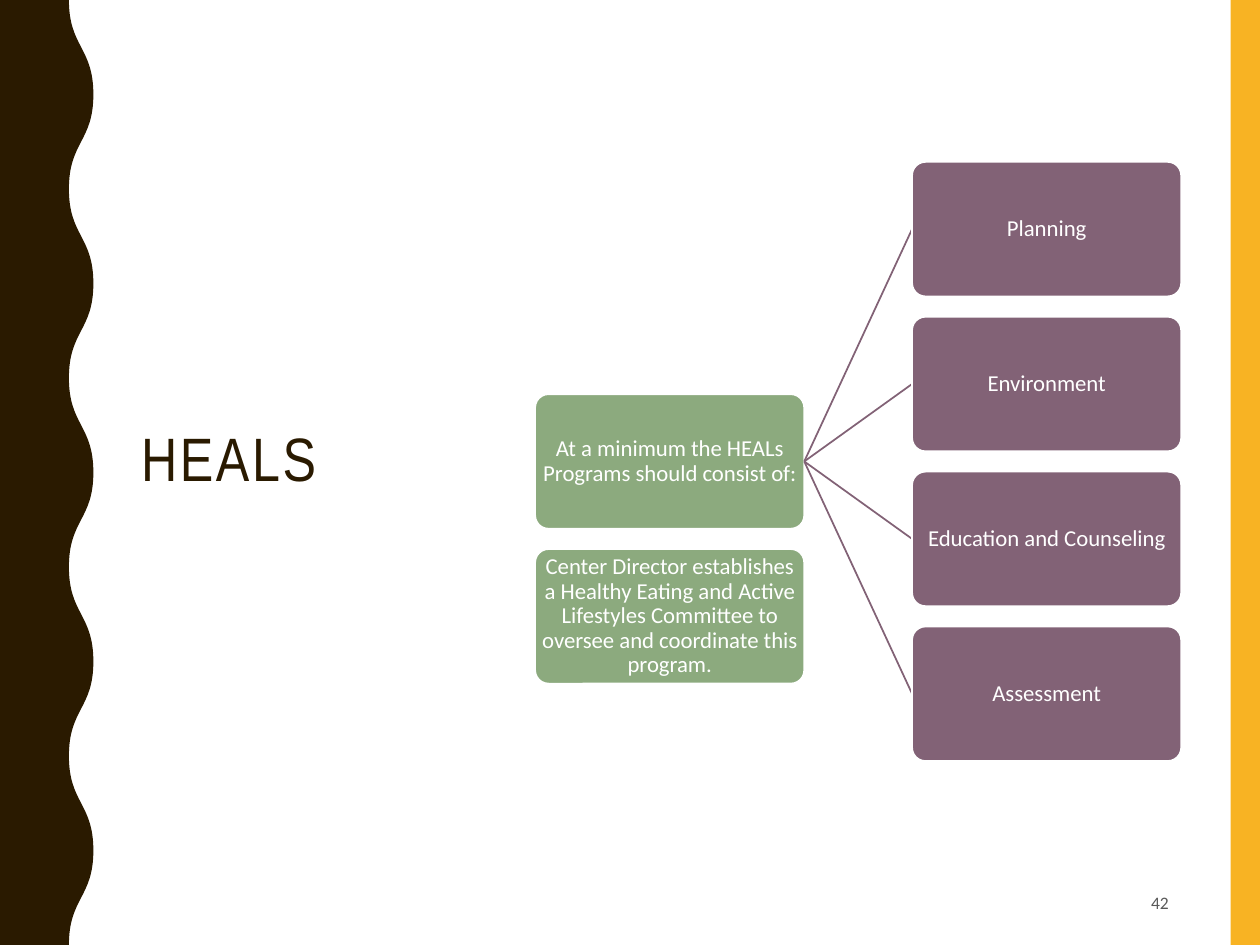
from lxml import etree
from pptx import Presentation
from pptx.dml.color import RGBColor
from pptx.enum.shapes import MSO_CONNECTOR, MSO_SHAPE
from pptx.enum.text import MSO_ANCHOR, MSO_AUTO_SIZE, PP_ALIGN
from pptx.oxml.ns import qn
from pptx.util import Pt

LEFT, CENTER, RIGHT = PP_ALIGN.LEFT, PP_ALIGN.CENTER, PP_ALIGN.RIGHT
MIDDLE = MSO_ANCHOR.MIDDLE
NO_AUTOFIT = MSO_AUTO_SIZE.NONE
RECTANGLE, ROUNDED = MSO_SHAPE.RECTANGLE, MSO_SHAPE.ROUNDED_RECTANGLE
STRAIGHT = MSO_CONNECTOR.STRAIGHT
TITLE_ONLY = 5
RIGHT_SIDE, LEFT_SIDE = 3, 1

COLORS = {
    "brown": "2A1A00",
    "yellow": "F8B323",
    "green": "8CAA7E",
    "purple": "826276",
    "gray": "595959",
    "white": "FFFFFF",
}


def write_text(shape, text, *, size, color, align=CENTER, font="Calibri",
               line_spacing=0.9, letter_spacing=None, inset=None):
    frame = shape.text_frame
    frame.word_wrap = True
    frame.auto_size = NO_AUTOFIT
    frame.vertical_anchor = MIDDLE
    if inset is not None:
        frame.margin_left = frame.margin_right = Pt(inset)
        frame.margin_top = frame.margin_bottom = Pt(inset)
    paragraph = frame.paragraphs[0]
    paragraph.alignment = align
    paragraph.line_spacing = line_spacing
    run = paragraph.add_run()
    run.text = text
    run.font.size = Pt(size)
    run.font.name = font
    run.font.color.rgb = RGBColor.from_string(COLORS[color])
    if letter_spacing is not None:
        run.font._element.set("spc", str(int(letter_spacing * 100)))


def paint(shape, fill, line=None):
    shape.shadow.inherit = False
    shape.fill.solid()
    shape.fill.fore_color.rgb = RGBColor.from_string(COLORS[fill])
    if line:
        shape.line.color.rgb = RGBColor.from_string(COLORS[line])
        shape.line.width = Pt(1)
    else:
        shape.line.fill.background()


presentation = Presentation()
presentation.slide_width, presentation.slide_height = Pt(720), Pt(540)
slide = presentation.slides.add_slide(presentation.slide_layouts[TITLE_ONLY])
shapes = slide.shapes

# Side bands: a plain stripe on the right, a wavy edge on the left
stripe = shapes.add_shape(RECTANGLE, Pt(703.2), Pt(0), Pt(16.8), Pt(540))
paint(stripe, "yellow")

TROUGH, CREST, HALF_WAVE, HALF_WAVES = 39.4, 53.4, 54, 10
turns = [(Pt(CREST if i % 2 else TROUGH), Pt(i * HALF_WAVE))
         for i in range(HALF_WAVES + 1)]
builder = shapes.build_freeform(*turns[0])
builder.add_line_segments(turns[1:] + [(0, Pt(540)), (0, 0)])
band = builder.convert_to_shape()
paint(band, "brown")

# Bend each straight half wave into an S curve with upright ends
segments = list(band._element.iter(qn("a:lnTo")))
for segment, (x1, y1), (x2, y2) in zip(segments, turns, turns[1:]):
    segment.tag = qn("a:cubicBezTo")
    middle = (y1 + y2) // 2
    for position, x in enumerate((x1, x2)):
        control = etree.Element(qn("a:pt"), x=str(x), y=str(middle))
        segment.insert(position, control)

# Title and slide number
title = shapes.title
title.left, title.top, title.width, title.height = Pt(73.4), Pt(51), Pt(200), Pt(426)
write_text(title, "HEALS", size=35, color="brown", align=LEFT,
           font="Arial Narrow", letter_spacing=1.5)

number = shapes.add_textbox(Pt(508.6), Pt(502), Pt(166.3), Pt(27.4))
write_text(number, "42", size=10, color="gray", align=RIGHT, line_spacing=1)

# Tree: the row is counted in box pitches from the top
TREE_TOP, PITCH, BOX_WIDTH, BOX_HEIGHT = 92.5, 88.5, 153.8, 76.9
ROOT_LEFT, BRANCH_LEFT = 305.8, 521.2
NODES = [
    ("At a minimum the HEALs Programs should consist of:", ROOT_LEFT, 1.5, "green"),
    ("Planning", BRANCH_LEFT, 0, "purple"),
    ("Environment", BRANCH_LEFT, 1, "purple"),
    ("Education and Counseling", BRANCH_LEFT, 2, "purple"),
    ("Assessment", BRANCH_LEFT, 3, "purple"),
    ("Center Director establishes a Healthy Eating and Active Lifestyles "
     "Committee to oversee and coordinate this program.", ROOT_LEFT, 2.5, "green"),
]
boxes = []
for text, left, row, color in NODES:
    box = shapes.add_shape(ROUNDED, Pt(left), Pt(TREE_TOP + row * PITCH),
                           Pt(BOX_WIDTH), Pt(BOX_HEIGHT))
    box.adjustments[0] = 0.1
    paint(box, color, line="white")
    write_text(box, text, size=13, color="white", inset=0.6)
    boxes.append(box)

root, branches = boxes[0], boxes[1:5]
for branch in branches:
    connector = shapes.add_connector(STRAIGHT, 0, 0, 0, 0)
    connector.begin_connect(root, RIGHT_SIDE)
    connector.end_connect(branch, LEFT_SIDE)
    connector.line.color.rgb = RGBColor.from_string(COLORS["purple"])
    connector.line.width = Pt(1)
    etree.SubElement(connector._element.spPr, qn("a:effectLst"))
    # The box covers the end of its connector
    branch._element.addprevious(connector._element)

presentation.save("out.pptx")
